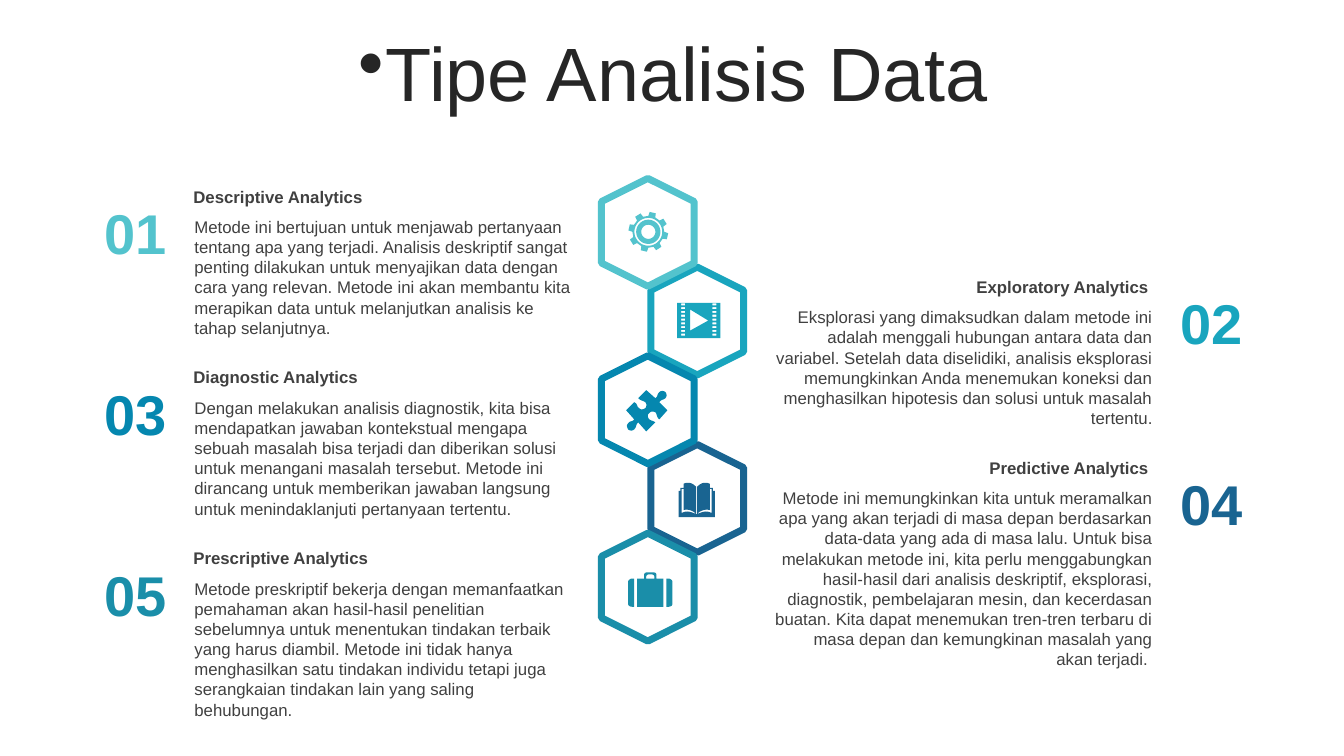
"""Build the slide on the five types of data analysis."""
from dataclasses import dataclass
from math import cos, radians, sin

from lxml.etree import SubElement
from pptx import Presentation
from pptx.dml.color import RGBColor
from pptx.enum.shapes import MSO_SHAPE
from pptx.enum.text import MSO_ANCHOR, MSO_AUTO_SIZE, PP_ALIGN
from pptx.oxml.ns import qn
from pptx.util import Inches, Pt


@dataclass(frozen=True)
class Theme:
    font: str = "Arial"
    title: str = "262626"
    text: str = "404040"
    paper: str = "FFFFFF"
    title_size: int = 54
    number_size: int = 40
    text_size: int = 12
    outline: int = 5


THEME = Theme()
TITLE = "Tipe Analisis Data"
ANALYTICS = [
    ("01", "Descriptive Analytics", "53C3CD", 6,
     "Metode ini bertujuan untuk menjawab pertanyaan tentang apa yang terjadi. Analisis deskriptif "
     "sangat penting dilakukan untuk menyajikan data dengan cara yang relevan. Metode ini akan "
     "membantu kita merapikan data untuk melanjutkan analisis ke tahap selanjutnya."),
    ("02", "Exploratory Analytics", "19A5BE", 6,
     "Eksplorasi yang dimaksudkan dalam metode ini adalah menggali hubungan antara data dan variabel. "
     "Setelah data diselidiki, analisis eksplorasi memungkinkan Anda menemukan koneksi dan "
     "menghasilkan hipotesis dan solusi untuk masalah tertentu."),
    ("03", "Diagnostic Analytics", "0587AF", 6,
     "Dengan melakukan analisis diagnostik, kita bisa mendapatkan jawaban kontekstual mengapa sebuah "
     "masalah bisa terjadi dan diberikan solusi untuk menangani masalah tersebut. Metode ini dirancang "
     "untuk memberikan jawaban langsung untuk menindaklanjuti pertanyaan tertentu."),
    ("04", "Predictive Analytics", "196491", 9,
     "Metode ini memungkinkan kita untuk meramalkan apa yang akan terjadi di masa depan berdasarkan "
     "data-data yang ada di masa lalu. Untuk bisa melakukan metode ini, kita perlu menggabungkan "
     "hasil-hasil dari analisis deskriptif, eksplorasi, diagnostik, pembelajaran mesin, dan kecerdasan "
     "buatan. Kita dapat menemukan tren-tren terbaru di masa depan dan kemungkinan masalah yang akan "
     "terjadi. "),
    ("05", "Prescriptive Analytics", "1A8EA9", 7,
     "Metode preskriptif bekerja dengan memanfaatkan pemahaman akan hasil-hasil penelitian sebelumnya "
     "untuk menentukan tindakan terbaik yang harus diambil. Metode ini tidak hanya menghasilkan satu "
     "tindakan individu tetapi juga serangkaian tindakan lain yang saling behubungan."),
]

PUZZLE = [
    (19, -18), (20, -17, 21, -14, 19, -12), (17, -10, 15, -11, 13, -8), (21, 0), (13, 9),
    (10, 7, 11, 4, 9, 2), (7, 1, 4, 1, 3, 3), (1, 4, 1, 7, 3, 9), (6, 11, 6, 10, 9, 12),
    (0, 21), (-8, 12), (-11, 15, -9, 16, -12, 19), (-14, 21, -17, 20, -18, 19),
    (-19, 17, -20, 15, -18, 13), (-16, 10, -14, 12, -12, 9), (-20, 0), (-12, -8),
    (-8, -6, -10, -4, -7, -2), (-5, 0, -3, -1, -1, -2), (0, -3, 1, -6, -1, -8),
    (-4, -10, -5, -9, -8, -12), (0, -20), (9, -12), (12, -14, 10, -15, 13, -18),
    (15, -20, 18, -19, 19, -18)]
BOOK_HALF = [
    (0, 34), (-18, 34), (-18, 8), (-16, 8), (-16, 5), (-13, 5), (-13, 1),
    (-11, 0, -10, 0, -8, 0), (-5, 0, -2.5, 2, -0.4, 4), (-0.4, 31), (0, 31)]
BOOK_PAGE = [(-15, 6), (-13, 6), (-13, 27), (-9, 26, -4, 27, -0.4, 31), (-6, 29, -9, 27, -15, 30)]
CASE_SIDE = [(16, 6), (18, 6), (20, 6, 22, 8, 22, 9), (22, 31), (22, 33, 20, 34, 18, 34), (16, 34)]
CASE_BODY = [
    (-4, 0), (4, 0), (5, 0, 6, 1, 6, 2), (6, 6), (13, 6), (13, 34), (-13, 34), (-13, 6),
    (-6, 6), (-6, 2), (-6, 1, -5, 0, -4, 0)]
CASE_HANDLE = [(-4, 6), (-4, 4), (-4, 3, -3, 2, -2, 2), (2, 2), (3, 2, 4, 3, 4, 4), (4, 6)]


def polar(radius, angle):
    return radius * cos(radians(angle)), radius * sin(radians(angle))


def rectangle(left, top, right, bottom):
    return [(left, top), (right, top), (right, bottom), (left, bottom)]


def mirrored(contour):
    return [tuple(-v if i % 2 == 0 else v for i, v in enumerate(step)) for step in contour]


def both_sides(*contours):
    return [side for contour in contours for side in (contour, mirrored(contour))]


def gear():
    teeth = [polar(radius, -77 + 45 * tooth + turn) for tooth in range(8)
             for radius, turn in ((15.8, -13), (19.8, -9), (19.8, 9), (15.8, 13))]
    return [teeth] + [[polar(radius, 6 * step) for step in range(60)] for radius in (13.8, 12, 7)]


def film():
    holes = [rectangle(13.5, -17 + 3.75 * row, 17.5, -15 + 3.75 * row) for row in range(9)]
    return [rectangle(-21.5, -17.5, 21.5, 17.5), [(-8.5, -11), (9.5, 0), (-8.5, 10)],
            *both_sides(*holes)]


ICONS = [
    ((6.43, 2.3), gear()),
    ((6.93, 3.18), film()),
    ((6.41, 4.07), [PUZZLE]),
    ((6.91, 4.79), both_sides(BOOK_HALF, BOOK_PAGE)),
    ((6.45, 5.68), [CASE_BODY, CASE_HANDLE, *both_sides(CASE_SIDE)]),
]
ROW_TOP, ROW_PITCH = 1.8, 0.897
HEXAGON_TOP, HEXAGON_PITCH = 1.77, 0.88
HEXAGON_WIDTH, HEXAGON_HEIGHT = 1.07, 0.92
COLUMNS = [
    {"number": 0.93, "heading": (1.82, 3.94), "body": (1.83, 3.98), "hexagon": 5.89,
     "align": PP_ALIGN.LEFT},
    {"number": 11.6, "heading": (7.56, 3.93), "body": (7.57, 3.96), "hexagon": 6.38,
     "align": PP_ALIGN.RIGHT},
]


def flatten(contour):
    points = [contour[0]]
    for step in contour[1:]:
        if len(step) == 2:
            points.append(step)
            continue
        controls = [points[-1], step[:2], step[2:4], step[4:]]
        for t in (k / 8 for k in range(1, 9)):
            weights = ((1 - t) ** 3, 3 * t * (1 - t) ** 2, 3 * t * t * (1 - t), t ** 3)
            points.append(tuple(sum(w * c[axis] for w, c in zip(weights, controls))
                                for axis in (0, 1)))
    return points


def add_text(slide, box, text, size, color, align, bold=False):
    shape = slide.shapes.add_textbox(*map(Inches, box))
    frame = shape.text_frame
    frame.word_wrap = True
    frame.auto_size = MSO_AUTO_SIZE.SHAPE_TO_FIT_TEXT
    paragraph = frame.paragraphs[0]
    paragraph.text = text
    paragraph.alignment = align
    font = paragraph.font
    font.name, font.size, font.bold = THEME.font, Pt(size), bold
    font.color.rgb = RGBColor.from_string(color)
    return frame


def add_title(slide):
    frame = add_text(slide, (0.35, 0.37, 12.66, 0.79), TITLE, THEME.title_size, THEME.title,
                     PP_ALIGN.CENTER)
    frame.auto_size = MSO_AUTO_SIZE.NONE
    frame.vertical_anchor = MSO_ANCHOR.MIDDLE
    paragraph = frame.paragraphs[0]
    paragraph.line_spacing, paragraph.space_before = 0.9, Pt(10)
    properties = paragraph.font._element.getparent()
    properties.set("marL", str(Inches(0.25)))
    properties.set("indent", str(Inches(-0.25)))
    bullet = SubElement(properties, qn("a:buChar"))
    bullet.set("char", "•")
    properties.find(qn("a:defRPr")).addprevious(bullet)


def add_hexagon(slide, column, row, color):
    top = HEXAGON_TOP + HEXAGON_PITCH * row + (HEXAGON_WIDTH - HEXAGON_HEIGHT) / 2
    shape = slide.shapes.add_shape(MSO_SHAPE.HEXAGON, Inches(column["hexagon"]), Inches(top),
                                   Inches(HEXAGON_WIDTH), Inches(HEXAGON_HEIGHT))
    shape.rotation = 90
    shape.shadow.inherit = False
    shape.adjustments[0] = 0.25
    shape.fill.solid()
    shape.fill.fore_color.rgb = RGBColor.from_string(THEME.paper)
    shape.line.color.rgb = RGBColor.from_string(color)
    shape.line.width = Pt(THEME.outline)


def add_icon(slide, origin, contours, color):
    placed = [[tuple(Inches(o + v / 100) for o, v in zip(origin, point))
               for point in flatten(contour)] for contour in contours]
    builder = slide.shapes.build_freeform(*placed[0][0])
    builder.add_line_segments(placed[0][1:])
    for points in placed[1:]:
        builder.move_to(*points[0])
        builder.add_line_segments(points[1:])
    shape = builder.convert_to_shape()
    shape.shadow.inherit = False
    shape.fill.solid()
    shape.fill.fore_color.rgb = RGBColor.from_string(color)
    shape.line.fill.background()


def main():
    presentation = Presentation()
    presentation.slide_width, presentation.slide_height = Inches(13.33), Inches(7.5)
    slide = presentation.slides.add_slide(presentation.slide_layouts[6])
    add_title(slide)
    for row in (3, 1, 2, 0, 4):
        add_hexagon(slide, COLUMNS[row % 2], row, ANALYTICS[row][2])
    for row, (number, heading, color, lines, body) in enumerate(ANALYTICS):
        column = COLUMNS[row % 2]
        top = ROW_TOP + ROW_PITCH * row
        (heading_left, heading_width), (body_left, body_width) = column["heading"], column["body"]
        add_text(slide, (column["number"], top + 0.12, 0.83, 0.77), number, THEME.number_size,
                 color, PP_ALIGN.CENTER, bold=True)
        add_text(slide, (body_left, top + 0.3, body_width, 0.1 + 0.2 * lines), body,
                 THEME.text_size, THEME.text, column["align"])
        add_text(slide, (heading_left, top, heading_width, 0.3), heading, THEME.text_size,
                 THEME.text, column["align"], bold=True)
        add_icon(slide, *ICONS[row], color)
    presentation.save("out.pptx")


if __name__ == "__main__":
    main()
